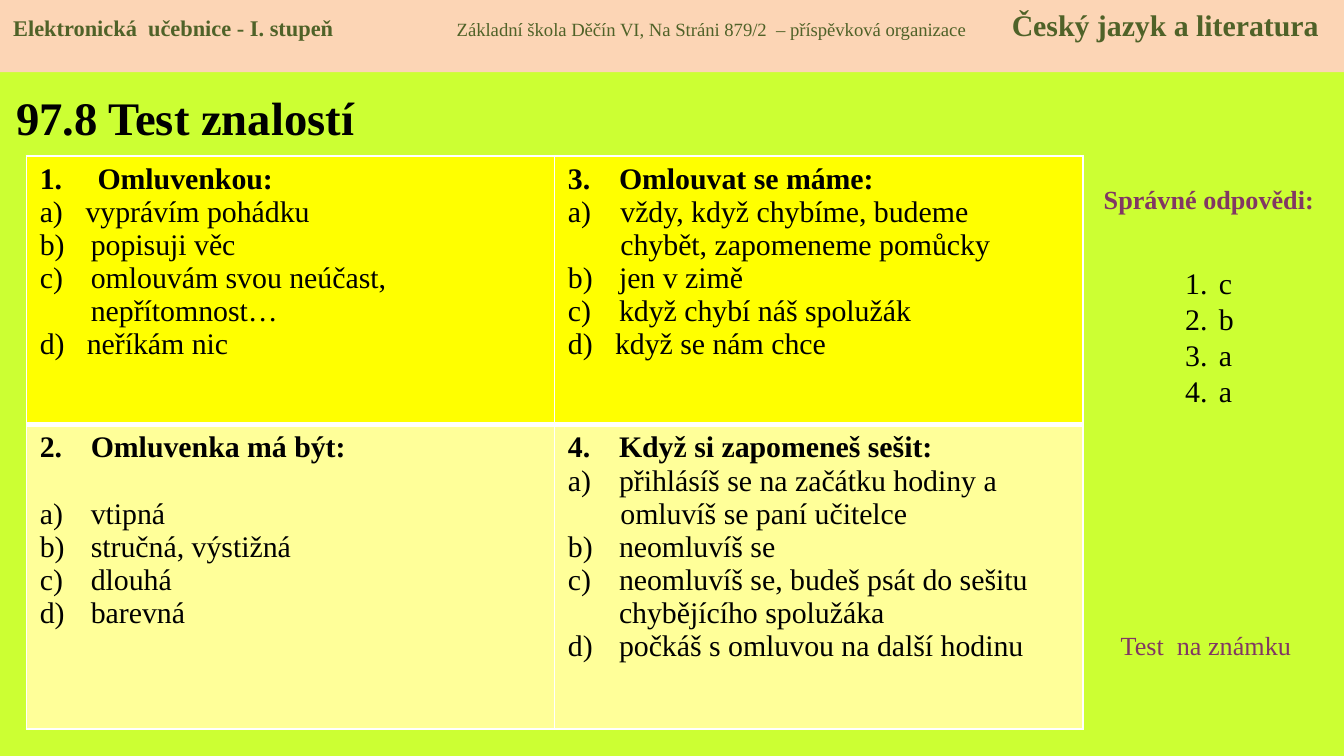
from lxml.etree import SubElement as Sub
from pptx import Presentation
from pptx.dml.color import RGBColor as RGB
from pptx.enum.shapes import MSO_SHAPE as Shape
from pptx.enum.text import MSO_ANCHOR as Anchor, PP_ALIGN as Align
from pptx.oxml.ns import qn
from pptx.util import Inches, Pt

WIDE = Inches(10)
HIGH = WIDE * 9 // 16
LIME = RGB(0xCC, 0xFF, 0x33)
PEACH = RGB(0xFC, 0xD5, 0xB5)
OLIVE = RGB(0x4F, 0x62, 0x28)
PLUM = RGB(0x81, 0x37, 0x63)
BLACK = RGB(0, 0, 0)
WHITE = RGB(0xFF, 0xFF, 0xFF)
YELLOW = RGB(0xFF, 0xFF, 0)
CREAM = RGB(0xFF, 0xFF, 0x99)

FACE = "Times New Roman"
HANG = 0.38
NUM, ABC = "arabicPeriod", "alphaLcParenR"

TESTS = [
    [
        [(NUM, 1, "Omluvenkou:", 0.43),
         (None, 0, "a)\tvyprávím pohádku", 0.34),
         (ABC, 2, "popisuji věc", HANG),
         (ABC, 2, "omlouvám svou neúčast, nepřítomnost…", HANG),
         (None, 0, "d)\tneříkám nic", 0.35)],
        [(NUM, 3, "Omlouvat se máme:", HANG),
         (None, 0, "a)\tvždy, když chybíme, budeme", 0.39),
         (None, 0, "chybět, zapomeneme pomůcky", 0.39),
         (ABC, 2, "jen v zimě", HANG),
         (ABC, 2, "když chybí náš spolužák", HANG),
         (None, 0, "d)\tkdyž se nám chce", 0.35)],
    ],
    [
        [(NUM, 2, "Omluvenka má být:", HANG),
         (ABC, 1, "vtipná", HANG),
         (ABC, 1, "stručná, výstižná", HANG),
         (ABC, 1, "dlouhá", HANG),
         (ABC, 1, "barevná", HANG)],
        [(NUM, 4, "Když si zapomeneš sešit:", HANG),
         (ABC, 1, "přihlásíš se na začátku hodiny a", HANG),
         (None, 0, "omluvíš se paní učitelce", 0.39),
         (ABC, 2, "neomluvíš se", HANG),
         (ABC, 2, "neomluvíš se, budeš psát do sešitu chybějícího spolužáka", HANG),
         (ABC, 2, "počkáš s omluvou na další hodinu", HANG)],
    ],
]


def share(left, top, width, height):
    return [int(part * full / 100) for part, full in
            zip((left, top, width, height), (WIDE, HIGH, WIDE, HIGH))]


def write(para, text, size, color, bold=False):
    run = para.add_run()
    run.text = text
    for name, value in {"name": FACE, "size": Pt(size), "bold": bold}.items():
        setattr(run.font, name, value)
    run.font.color.rgb = color


def indent(para, left, hang=True):
    props = para._p.get_or_add_pPr()
    props.set("marL", str(Inches(left)))
    props.set("indent", str(-Inches(left) if hang else 0))
    return props


def number(para, kind, start, left):
    mark = Sub(indent(para, left), qn("a:buAutoNum"), type=kind)
    if start > 1:
        mark.set("startAt", str(start))


def lines(frame):
    yield frame.paragraphs[0]
    while True:
        yield frame.add_paragraph()


def label(slide, box):
    frame = slide.shapes.add_textbox(*box).text_frame
    frame.word_wrap = True
    return frame


def header(slide, box):
    band = slide.shapes.add_shape(Shape.RECTANGLE, *box)
    band.shadow.inherit = False
    band.fill.solid()
    band.fill.fore_color.rgb = PEACH
    band.line.fill.background()
    frame = band.text_frame
    frame.word_wrap = True
    frame.vertical_anchor = Anchor.TOP
    para = frame.paragraphs[0]
    para.alignment = Align.LEFT
    stops = Sub(para._p.get_or_add_pPr(), qn("a:tabLst"))
    for stop in (3.3, 7.43):
        Sub(stops, qn("a:tab"), pos=str(Inches(stop)), algn="l")
    write(para, "Elektronická  učebnice - I. stupeň\t", 12, OLIVE, True)
    write(para, "Základní škola Děčín VI, Na Stráni 879/2  – příspěvková organizace\t", 10, OLIVE)
    write(para, "Český jazyk a literatura", 16, OLIVE, True)


def heading(slide, box):
    title = slide.shapes.title
    for name, value in zip(("left", "top", "width", "height"), box):
        setattr(title, name, value)
    frame = title.text_frame
    frame.word_wrap = True
    frame.vertical_anchor = Anchor.MIDDLE
    para = frame.paragraphs[0]
    para.alignment = Align.LEFT
    write(para, "97.8 Test znalostí", 25, BLACK, True)


def edge(cell, sides):
    props = cell._tc.get_or_add_tcPr()
    for side, width in sides.items():
        line = Sub(props, qn("a:ln" + side), w=str(Pt(width)))
        Sub(Sub(line, qn("a:solidFill")), qn("a:srgbClr"), val=str(WHITE))


def fill(cell, items):
    for para, (kind, start, text, left) in zip(lines(cell.text_frame), items):
        if kind:
            number(para, kind, start, left)
        else:
            indent(para, left, "\t" in text)
        write(para, text, 16, BLACK, kind == NUM)


def quiz(slide, box):
    table = slide.shapes.add_table(2, 2, *box).table
    table.first_row = table.horz_banding = False
    for col in table.columns:
        col.width = box[2] // 2
    for row, part in zip(table.rows, (13, 15)):
        row.height = box[3] * part // 28
    looks = ((YELLOW, {"L": 1, "R": 1, "T": 1, "B": 3}),
             (CREAM, {"L": 1, "R": 1, "T": 3, "B": 1}))
    for row, tests, (color, sides) in zip(table.rows, TESTS, looks):
        for cell, items in zip(row.cells, tests):
            edge(cell, sides)
            cell.fill.solid()
            cell.fill.fore_color.rgb = color
            fill(cell, items)
    table.cell(1, 0).text_frame.paragraphs[1].space_before = Pt(17.7)


def caption(slide, box, text, bold, align):
    para = label(slide, box).paragraphs[0]
    para.alignment = align
    write(para, text, 14, PLUM, bold)


def answers(slide, box):
    items = zip("cbaa", lines(label(slide, box)))
    for text, para in items:
        number(para, NUM, 1, 0.25)
        write(para, text, 16, BLACK)


def main():
    deck = Presentation()
    deck.slide_width, deck.slide_height = WIDE, HIGH
    slide = deck.slides.add_slide(deck.slide_layouts[5])
    slide.background.fill.solid()
    slide.background.fill.fore_color.rgb = LIME
    heading(slide, share(0.2, 9.7, 31.9, 11.56))
    caption(slide, share(80.5, 23.4, 18.9, 6.04), "Správné odpovědi:", True, Align.CENTER)
    quiz(slide, share(1.96, 20.6, 78.6, 74.31))
    answers(slide, share(87.2, 34.2, 5.5, 30.6))
    caption(slide, share(82.4, 82.4, 15.7, 6.04), "Test  na známku", False, Align.LEFT)
    header(slide, share(0, 0, 100, 9.55))
    deck.save("out.pptx")


if __name__ == "__main__":
    main()
